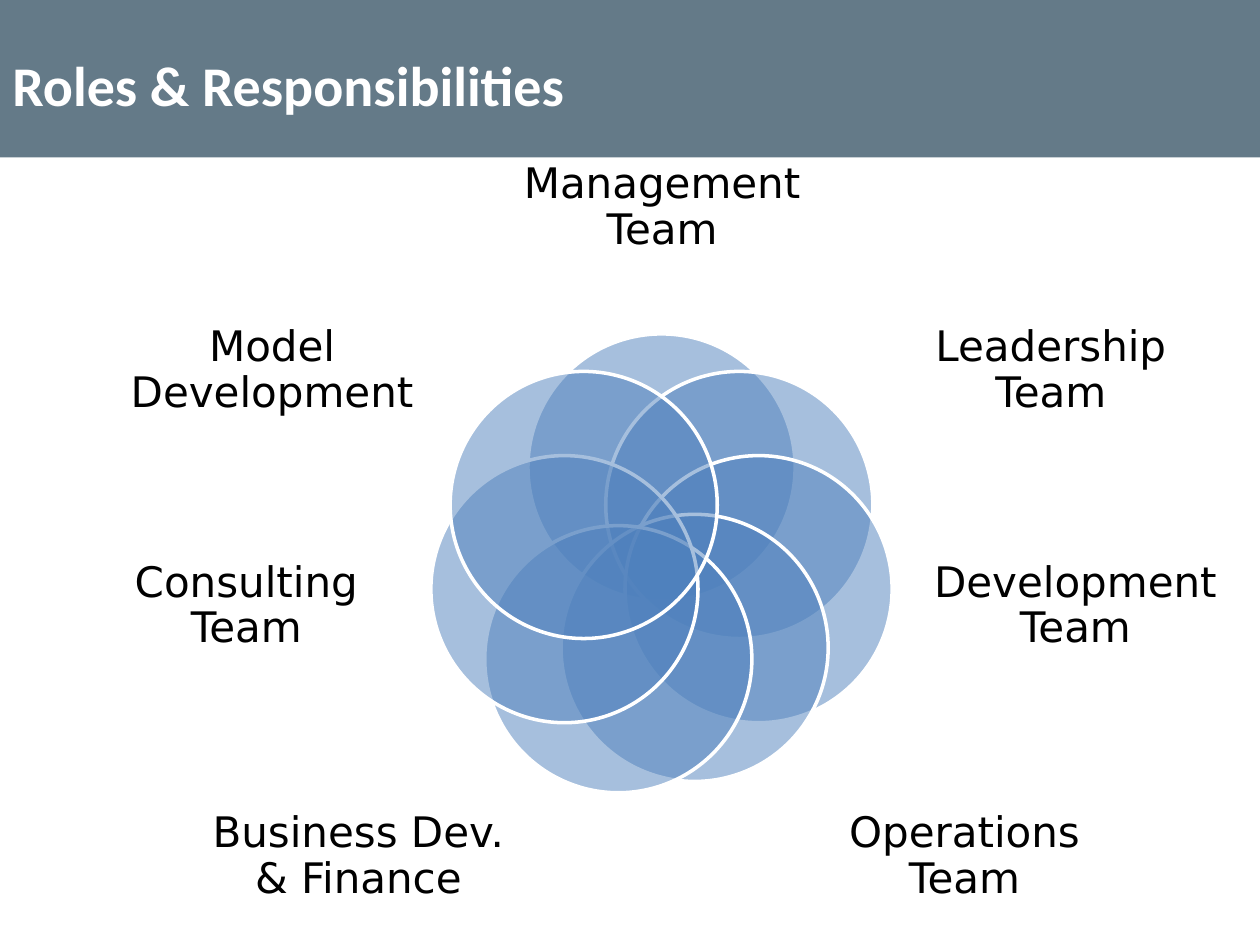
import math

import pptx
import pptx.util
from lxml import etree
from pptx.dml.color import RGBColor
from pptx.enum.shapes import MSO_SHAPE
from pptx.enum.text import MSO_ANCHOR, PP_ALIGN
from pptx.oxml.ns import qn
from pptx.util import Inches

COLORS = {"header": "647A88", "petal": "4F81BD", "white": "FFFFFF", "label": "000000"}

# name, label box within the diagram, petal nudge
TEAMS = [
    ("Management Team", (4.04, 0, 2.43, 1.3), (0, 0)),
    ("Leadership Team", (7.19, 1.23, 2.3, 1.43), (0, 0)),
    ("Development Team", (7.41, 3.05, 2.25, 1.53), (0, 0)),
    ("Operations Team", (6.44, 5.1, 2.43, 1.4), (-0.08, -0.07)),
    ("Business Dev. & Finance", (1.63, 5.1, 2.43, 1.4), (0, 0.02)),
    ("Consulting Team", (0.83, 3.05, 2.25, 1.53), (0, 0)),
    ("Model Development", (1.01, 1.23, 2.3, 1.43), (0, 0)),
]
PETAL_SIZE = 2.12
RING_CENTER = (5.25, 3.5)
RING_RADIUS = 0.79


def rgb(name):
    return RGBColor.from_string(COLORS[name])


def add_filled(shapes, preset, box, color):
    shape = shapes.add_shape(preset, *map(Inches, box))
    shape.shadow.inherit = False
    shape.fill.solid()
    shape.fill.fore_color.rgb = rgb(color)
    return shape


def add_text(shapes, box, text, font, size, color, align, bold=False, inset=None):
    frame = shapes.add_textbox(*map(Inches, box)).text_frame
    frame.word_wrap = True
    frame.vertical_anchor = MSO_ANCHOR.MIDDLE
    if inset is not None:
        frame.margin_left = frame.margin_right = Inches(inset)
        frame.margin_top = frame.margin_bottom = Inches(inset)
    paragraph = frame.paragraphs[0]
    paragraph.alignment = align
    run = paragraph.add_run()
    run.text = text
    run.font.name = font
    run.font.size = pptx.util.Pt(size)
    run.font.bold = bold
    run.font.color.rgb = rgb(color)
    return paragraph


def add_header(slide, left, top, width, height):
    band = add_filled(slide.shapes, MSO_SHAPE.RECTANGLE, (left, top, width, height), "header")
    band.line.fill.background()
    add_text(slide.shapes, (left, top + 0.08, width - 1, height - 0.08),
             "Roles & Responsibilities", "Calibri", 32, "white", PP_ALIGN.LEFT, bold=True)


def add_petal(shapes, center_x, center_y):
    box = (center_x - PETAL_SIZE / 2, center_y - PETAL_SIZE / 2, PETAL_SIZE, PETAL_SIZE)
    petal = add_filled(shapes, MSO_SHAPE.OVAL, box, "petal")
    petal.line.color.rgb = rgb("white")
    petal.line.width = pptx.util.Pt(2)
    fill_color = petal.fill._xPr.find(qn("a:solidFill"))[0]
    etree.SubElement(fill_color, qn("a:alpha"), val="50000")


def add_team_diagram(slide, left, top):
    diagram = slide.shapes.add_group_shape().shapes
    for index, (team, (x, y, width, height), (dx, dy)) in enumerate(TEAMS):
        angle = 2 * math.pi * index / len(TEAMS)
        add_petal(diagram,
                  left + RING_CENTER[0] + RING_RADIUS * math.sin(angle) + dx,
                  top + RING_CENTER[1] - RING_RADIUS * math.cos(angle) + dy)
        label = add_text(diagram, (left + x, top + y, width, height), team,
                         "DejaVu Sans", 24, "label", PP_ALIGN.CENTER, inset=0)
        label.line_spacing = 0.9


def main():
    presentation = pptx.Presentation()
    presentation.slide_width = Inches(10)
    presentation.slide_height = Inches(7.5)
    slide = presentation.slides.add_slide(presentation.slide_layouts[6])
    add_header(slide, 0, 0, 10, 1.25)
    add_team_diagram(slide, 0, 1)
    presentation.save("out.pptx")


if __name__ == "__main__":
    main()
